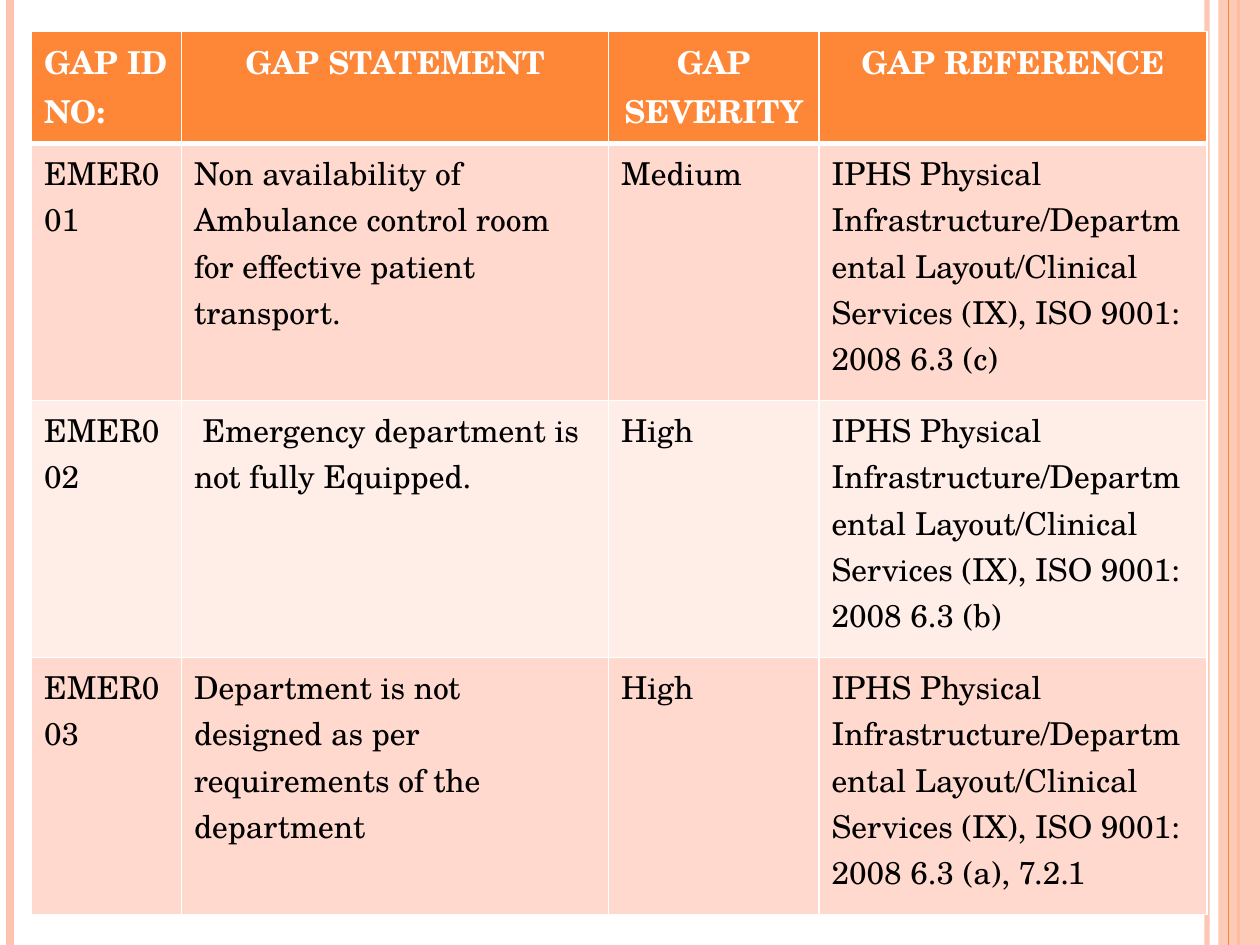
"""Build the emergency department gap table slide."""
from dataclasses import dataclass

from lxml.etree import SubElement
from pptx import Presentation
from pptx.dml.color import RGBColor
from pptx.enum.shapes import MSO_CONNECTOR as CONN, MSO_SHAPE as SHAPE
from pptx.enum.text import PP_ALIGN as ALIGN
from pptx.oxml.ns import qn
from pptx.util import Inches, Pt

FONT = "TeX Gyre Schola"
ORANGE, PEACH, WHITE, BLACK = "FE8637", "FEC3AE", "FFFFFF", "000000"
BANDS = ("FFD9CE", "FFEDE8")
COL_WIDTHS = (1.19, 3.39, 1.67, 3.08)
HEADER_HEIGHT, BODY_HEIGHT = 0.89, 2.04
HEADERS = ("GAP ID NO:", "GAP STATEMENT", "GAP SEVERITY", "GAP REFERENCE")
REFERENCE = ("IPHS Physical Infrastructure/Departmental Layout/Clinical "
             "Services (IX), ISO 9001: 2008 6.3 ")


@dataclass
class Rule:
    x: float
    color: str
    width: float
    opacity: int = 100


@dataclass
class Gap:
    number: int
    statement: str
    severity: str
    clause: str

    def texts(self) -> tuple:
        return (f"EMER{self.number:03}", self.statement, self.severity,
                REFERENCE + self.clause)


LEFT_RULES = (Rule(9.58, PEACH, 3, 93), Rule(0.08, PEACH, 4.5),
              Rule(9.83, ORANGE, 1.5))
BAND_RULE = Rule(9.75, ORANGE, 0.75)
GAPS = (
    Gap(1, "Non availability of Ambulance control room for effective "
           "patient transport.", "Medium", "(c)"),
    Gap(2, " Emergency department is not fully Equipped.", "High", "(b)"),
    Gap(3, "Department is not designed as per requirements of the "
           "department", "High", "(a), 7.2.1"),
)


def rgb(color: str) -> RGBColor:
    return RGBColor.from_string(color)


def set_opacity(sp, percent: int) -> None:
    for clr in sp._element.spPr.iter(qn("a:srgbClr")):
        SubElement(clr, qn("a:alpha"), val=str(percent * 1000))


def add_rule(s, rule: Rule) -> None:
    x = Inches(rule.x)
    sp = s.shapes.add_connector(CONN.STRAIGHT, x, 0, x, Inches(7.5))
    sp.line.color.rgb = rgb(rule.color)
    sp.line.width = Pt(rule.width)
    if rule.opacity < 100:
        set_opacity(sp, rule.opacity)
    SubElement(sp._element.spPr, qn("a:effectLst"))


def add_band(s) -> None:
    sp = s.shapes.add_shape(SHAPE.RECTANGLE, Inches(9.67), 0,
                            Inches(0.33), Inches(7.5))
    sp.shadow.inherit = False
    sp.fill.solid()
    sp.fill.fore_color.rgb = rgb(PEACH)
    sp.line.fill.background()
    set_opacity(sp, 87)


def set_borders(cell, top: float, bottom: float) -> None:
    tc_pr = cell._tc.get_or_add_tcPr()
    for side, width in zip("LRTB", (1, 1, top, bottom)):
        ln = SubElement(tc_pr, qn(f"a:ln{side}"), w=str(Pt(width)))
        fill = SubElement(ln, qn("a:solidFill"))
        SubElement(fill, qn("a:srgbClr"), val=WHITE)


def fill_cell(cell, text: str, row: int, col: int) -> None:
    header = row == 0
    set_borders(cell, 3 if row == 1 else 1, 3 if header else 1)
    cell.fill.solid()
    cell.fill.fore_color.rgb = rgb(ORANGE if header else BANDS[(row - 1) % 2])
    p = cell.text_frame.paragraphs[0]
    p.alignment = ALIGN.CENTER if header and col else ALIGN.LEFT
    r = p.add_run()
    r.text = text
    r.font.name, r.font.size, r.font.bold = FONT, Pt(18), header
    r.font.color.rgb = rgb(WHITE if header else BLACK)


def add_gap_table(s) -> None:
    rows = (HEADERS, *(gap.texts() for gap in GAPS))
    heights = (HEADER_HEIGHT, *(BODY_HEIGHT for _ in GAPS))
    table = s.shapes.add_table(
        len(rows), len(COL_WIDTHS), Inches(0.25), Inches(0.25),
        Inches(sum(COL_WIDTHS)), Inches(sum(heights))).table
    for column, width in zip(table.columns, COL_WIDTHS):
        column.width = Inches(width)
    for i, texts in enumerate(rows):
        table.rows[i].height = Inches(heights[i])
        for j, text in enumerate(texts):
            fill_cell(table.cell(i, j), text, i, j)


def main() -> None:
    prs = Presentation()
    prs.slide_width, prs.slide_height = Inches(10), Inches(7.5)
    s = prs.slides.add_slide(prs.slide_layouts[6])
    s.background.fill.solid()
    s.background.fill.fore_color.rgb = rgb(WHITE)
    for rule in LEFT_RULES:
        add_rule(s, rule)
    add_band(s)
    add_rule(s, BAND_RULE)
    add_gap_table(s)
    prs.save("out.pptx")


if __name__ == "__main__":
    main()
